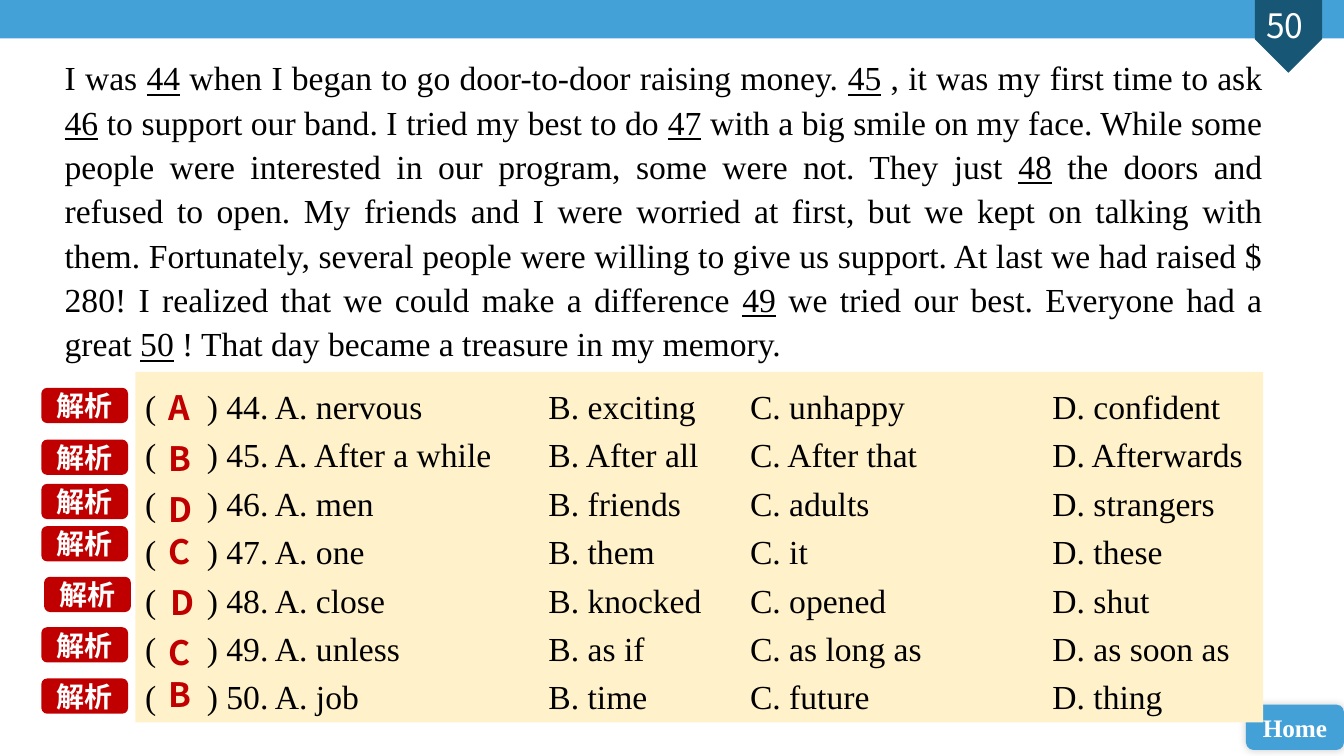
from lxml.etree import SubElement
from pptx import Presentation
from pptx.dml.color import RGBColor
from pptx.enum.shapes import MSO_SHAPE
from pptx.enum.text import MSO_ANCHOR, MSO_AUTO_SIZE, PP_ALIGN
from pptx.oxml.ns import qn
from pptx.util import Pt

PASSAGE = (
    "I was _44_ when I began to go door-to-door raising money. _45_ , it was my first time to ask "
    "_46_ to support our band. I tried my best to do _47_ with a big smile on my face. While some "
    "people were interested in our program, some were not. They just _48_ the doors and refused to "
    "open. My friends and I were worried at first, but we kept on talking with them. Fortunately, "
    "several people were willing to give us support. At last we had raised $ 280! I realized that we "
    "could make a difference _49_ we tried our best. Everyone had a great _50_ ! That day became a "
    "treasure in my memory."
)
FIRST_NUMBER = 44
CHOICES = [
    ("nervous", "exciting", "unhappy", "confident"),
    ("After a while", "After all", "After that", "Afterwards"),
    ("men", "friends", "adults", "strangers"),
    ("one", "them", "it", "these"),
    ("close", "knocked", "opened", "shut"),
    ("unless", "as if", "as long as", "as soon as"),
    ("job", "time", "future", "thing"),
]
ANSWERS = [
    {"letter": "A", "top": 273, "tag_top": 277, "nudge": 0},
    {"letter": "B", "top": 309.6, "tag_top": 314, "nudge": 0},
    {"letter": "D", "top": 345.6, "tag_top": 345.6, "nudge": 0},
    {"letter": "C", "top": 375.8, "tag_top": 375.8, "nudge": 0},
    {"letter": "D", "top": 412, "tag_top": 412, "nudge": 2},
    {"letter": "C", "top": 448, "tag_top": 448, "nudge": 0},
    {"letter": "B", "top": 478, "tag_top": 484.6, "nudge": 0},
]
TAB_STOPS = (44, 288, 432, 648)

SERIF = "Times New Roman"
SANS = "Noto Sans CJK SC"
BLUE = RGBColor(0x43, 0xA1, 0xD8)
NAVY = RGBColor(0x18, 0x56, 0x75)
CREAM = RGBColor(0xFF, 0xF2, 0xCA)
RED = RGBColor(0xC0, 0x00, 0x00)
WHITE = RGBColor(0xFF, 0xFF, 0xFF)
BLACK = RGBColor(0x00, 0x00, 0x00)


def write(paragraph, text, font=SERIF, size=24, color=BLACK, bold=False,
          align=PP_ALIGN.LEFT, spacing=1.0):
    paragraph.alignment = align
    paragraph.line_spacing = spacing
    for index, part in enumerate(text.split("_")):
        run = paragraph.add_run()
        run.text = part
        run.font.name = font
        run.font.size = Pt(size)
        run.font.color.rgb = color
        run.font.bold = bold
        run.font.underline = index % 2 == 1


def add_block(kind, left, top, width, height, fill):
    shape = slide.shapes.add_shape(kind, Pt(left), Pt(top), Pt(width), Pt(height))
    shape.shadow.inherit = False
    shape.fill.solid()
    shape.fill.fore_color.rgb = fill
    shape.line.fill.background()
    shape.text_frame.vertical_anchor = MSO_ANCHOR.MIDDLE
    return shape


def add_label(left, top, width, height):
    label = slide.shapes.add_textbox(Pt(left), Pt(top), Pt(width), Pt(height))
    label.text_frame.word_wrap = False
    return label.text_frame.paragraphs[0]


def add_soft_shadow(shape):
    effects = shape._element.spPr.find(qn("a:effectLst"))
    shadow = SubElement(effects, qn("a:outerShdw"), blurRad=str(Pt(6)), dist="0",
                        dir="18900000", algn="ctr", rotWithShape="0")
    color = SubElement(shadow, qn("a:srgbClr"), val="000000")
    SubElement(color, qn("a:alpha"), val="20000")


def add_tab_stops(paragraph, positions):
    tabs = SubElement(paragraph._p.get_or_add_pPr(), qn("a:tabLst"))
    for position in positions:
        SubElement(tabs, qn("a:tab"), pos=str(Pt(position)), algn="l")


presentation = Presentation()
presentation.slide_width = Pt(960)
presentation.slide_height = Pt(540)
slide = presentation.slides.add_slide(presentation.slide_layouts[1])
title = slide.shapes.title._element
title.getparent().remove(title)

add_block(MSO_SHAPE.RECTANGLE, 0, 0, 960, 27.4, BLUE)
page_marker = add_block(MSO_SHAPE.PENTAGON, 894.3, 2, 52, 48, NAVY)
page_marker.rotation = 90
write(add_label(882.5, 0, 70.5, 36), "50", font=SANS, color=WHITE, align=PP_ALIGN.CENTER)

home_button = add_block(MSO_SHAPE.ROUNDED_RECTANGLE, 890, 503.3, 70, 32.4, BLUE)
add_soft_shadow(home_button)
write(home_button.text_frame.paragraphs[0], "Home", size=18, color=WHITE, bold=True,
      align=PP_ALIGN.CENTER)

passage = slide.placeholders[1]
passage.left, passage.top, passage.width, passage.height = Pt(39), Pt(34.5), Pt(870), Pt(231)
passage.text_frame.auto_size = MSO_AUTO_SIZE.NONE
passage.text_frame.vertical_anchor = MSO_ANCHOR.TOP
passage_paragraph = passage.text_frame.paragraphs[0]
write(passage_paragraph, PASSAGE, align=PP_ALIGN.JUSTIFY, spacing=1.1)
passage_paragraph.space_before = Pt(0)
passage_properties = passage_paragraph._p.get_or_add_pPr()
passage_properties.set("marL", "0")
passage_properties.set("indent", "0")
SubElement(passage_properties, qn("a:buNone"))

question_panel = add_block(MSO_SHAPE.RECTANGLE, 96.7, 265.7, 805.6, 250.3, CREAM)
for index, choices in enumerate(CHOICES):
    frame = question_panel.text_frame
    paragraph = frame.add_paragraph() if index else frame.paragraphs[0]
    options = "\t".join(f"{letter}. {choice}" for letter, choice in zip("ABCD", choices))
    write(paragraph, f"(\t) {FIRST_NUMBER + index}. {options}", spacing=1.2)
    add_tab_stops(paragraph, TAB_STOPS)

for answer in ANSWERS:
    write(add_label(113 + answer["nudge"], answer["top"], 32, 36), answer["letter"],
          font=SANS, color=RED, bold=True)
    tag = add_block(MSO_SHAPE.ROUNDED_RECTANGLE, 29.5 + answer["nudge"], answer["tag_top"],
                    62, 25.2, RED)
    write(tag.text_frame.paragraphs[0], "解析", font="Calibri", size=20, color=WHITE,
          bold=True, align=PP_ALIGN.CENTER)

presentation.save("out.pptx")
